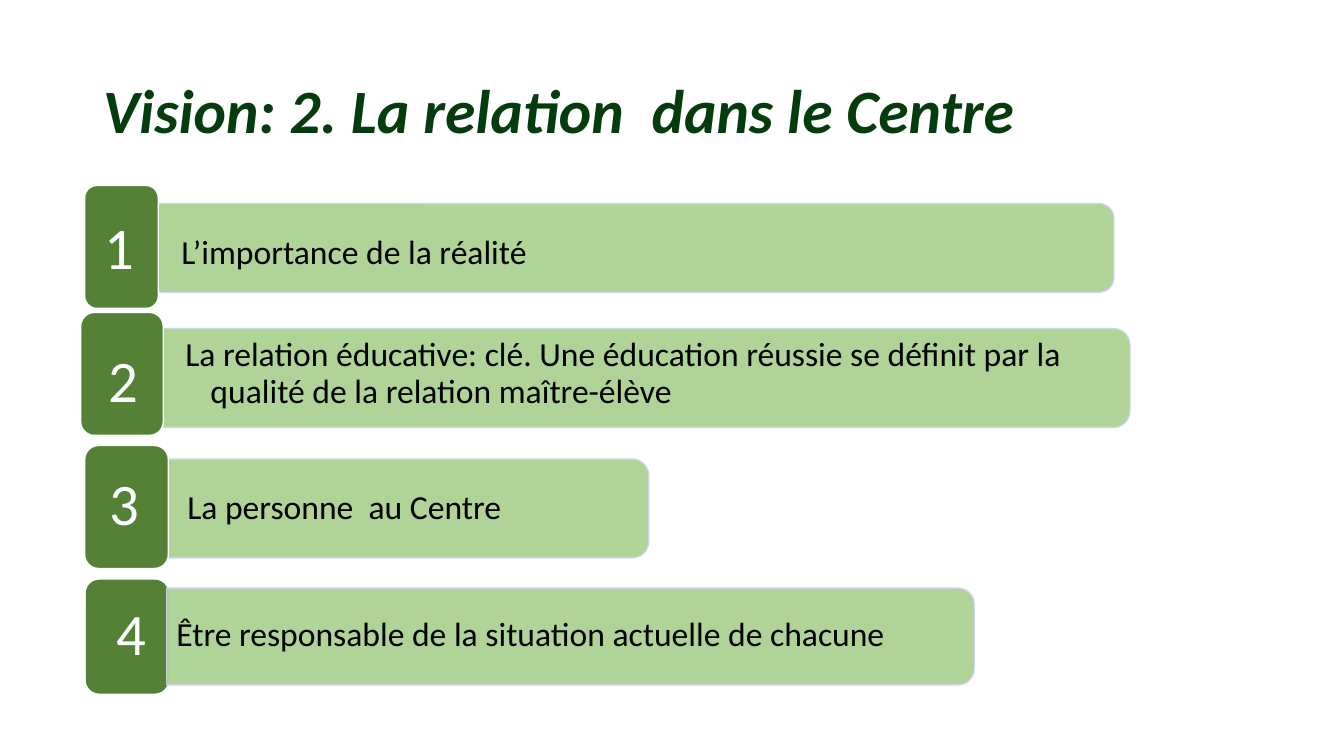
from dataclasses import dataclass
from typing import Optional

from lxml.etree import SubElement
from pptx import Presentation
from pptx.dml.color import RGBColor
from pptx.enum.shapes import MSO_SHAPE
from pptx.enum.text import MSO_ANCHOR, MSO_AUTO_SIZE, PP_ALIGN
from pptx.oxml.ns import qn
from pptx.util import Inches, Pt

COLORS = {
    "title": "053C0E",
    "bar": "A8D08C",
    "bar_line": "CCD3EA",
    "badge": "548135",
    "white": "FFFFFF",
    "black": "000000",
}
FONT = "Calibri"
WIDTH, HEIGHT = Inches(13.333), Inches(7.5)
ROW_LEFT = 6


@dataclass
class Row:
    top: float
    text: str
    bar: tuple
    label: tuple
    badge: tuple
    number: Optional[tuple] = None


# Boxes are left, top, width, height in percent of the slide.
ROWS = [
    Row(24.53, "L’importance de la réalité",
        bar=(4.95, 2.4, 71.93, 11.73), label=(6.75, 3.2, 46.05, 11.73),
        badge=(0.3, 0, 5.48, 16.27), number=(-0.3, 1.47, 6.38, 14.27)),
    Row(41.33, "La relation éducative: clé. Une éducation réussie se définit "
        "par la qualité de la relation maître-élève",
        bar=(5.78, 2.14, 72.3, 13.07), label=(7.05, 2.27, 72, 11.73),
        badge=(0, 0, 6.15, 16.27), number=(0.68, 2.27, 4.95, 14.13)),
    Row(58.93, "La personne  au Centre",
        bar=(6.49, 1.8, 35.78, 13.07), label=(7.2, 2.54, 35.48, 11.73),
        badge=(0.3, 0, 6.23, 16.27), number=(0.68, 0.54, 5.1, 15.07)),
    Row(76.67, "Être responsable de la situation actuelle de chacune",
        bar=(6.41, 1.13, 60.08, 12.8), label=(6.38, 1.73, 59.48, 11.47),
        badge=(0.38, 0, 6.15, 15.07)),
]


def color(name):
    return RGBColor.from_string(COLORS[name])


def place(box, top=0, left=0):
    x, y, width, height = box
    return (int(WIDTH * (left + x) / 100), int(HEIGHT * (top + y) / 100),
            int(WIDTH * width / 100), int(HEIGHT * height / 100))


def write(shape, text, size, ink, inset=(0.1, 0.05), align=PP_ALIGN.LEFT):
    frame = shape.text_frame
    frame.word_wrap = True
    frame.auto_size = MSO_AUTO_SIZE.NONE
    frame.vertical_anchor = MSO_ANCHOR.MIDDLE
    frame.margin_left = frame.margin_right = Inches(inset[0])
    frame.margin_top = frame.margin_bottom = Inches(inset[1])
    para = frame.paragraphs[0]
    para.text = text
    para.alignment = align
    para.line_spacing = 0.9
    para.font.name = FONT
    para.font.size = Pt(size)
    para.font.color.rgb = color(ink)
    return para


def add_panel(page, kind, box, fill, line=None):
    panel = page.shapes.add_shape(kind, *box)
    panel.shadow.inherit = False
    panel.fill.solid()
    panel.fill.fore_color.rgb = color(fill)
    if line:
        panel.line.color.rgb = color(line)
        panel.line.width = Pt(1)
    else:
        panel.line.fill.background()
    return panel


def add_title(page, box):
    title = page.shapes.title
    title.left, title.top, title.width, title.height = place(box)
    para = write(title, "Vision: 2. La relation  dans le Centre", 44, "title")
    para.font.bold = para.font.italic = True


def add_bar(page, box, rounded):
    if rounded:
        bar = add_panel(page, MSO_SHAPE.ROUNDED_RECTANGLE, box, "bar", "bar_line")
    else:
        left, top, width, height = box
        shift = (width - height) // 2
        upright = (left + shift, top - shift, height, width)
        bar = add_panel(page, MSO_SHAPE.ROUND_2_SAME_RECTANGLE, upright,
                        "bar", "bar_line")
        bar.rotation = 90
    for tint in bar.element.spPr.iter(qn("a:srgbClr")):
        SubElement(tint, qn("a:alpha"), val="90000")


def add_label(page, box, text):
    para = write(page.shapes.add_textbox(*box), text, 24, "black")
    para.level = 1
    indent = Inches(0.25)
    properties = para._p.get_or_add_pPr()
    properties.set("marL", str(indent))
    properties.set("indent", str(-indent))


def add_badge(page, row, number):
    box = place(row.badge, row.top, ROW_LEFT)
    line = "white" if row.number else None
    holder = add_panel(page, MSO_SHAPE.ROUNDED_RECTANGLE, box, "badge", line)
    inset = (0.27, 0.14)
    if row.number:
        holder = page.shapes.add_textbox(*place(row.number, row.top, ROW_LEFT))
        inset = (0.17, 0.09)
    write(holder, str(number), 42, "white", inset, PP_ALIGN.CENTER)


def add_row(page, row, number):
    badge_behind = row.number is None
    if badge_behind:
        add_badge(page, row, number)
    add_bar(page, place(row.bar, row.top, ROW_LEFT), rounded=number == 1)
    add_label(page, place(row.label, row.top, ROW_LEFT), row.text)
    if not badge_behind:
        add_badge(page, row, number)


def main():
    deck = Presentation()
    deck.slide_width, deck.slide_height = WIDTH, HEIGHT
    page = deck.slides.add_slide(deck.slide_layouts[5])
    add_title(page, (6.9, 5.33, 86.25, 19.33))
    for number, row in enumerate(ROWS, start=1):
        add_row(page, row, number)
    deck.save("out.pptx")


if __name__ == "__main__":
    main()
